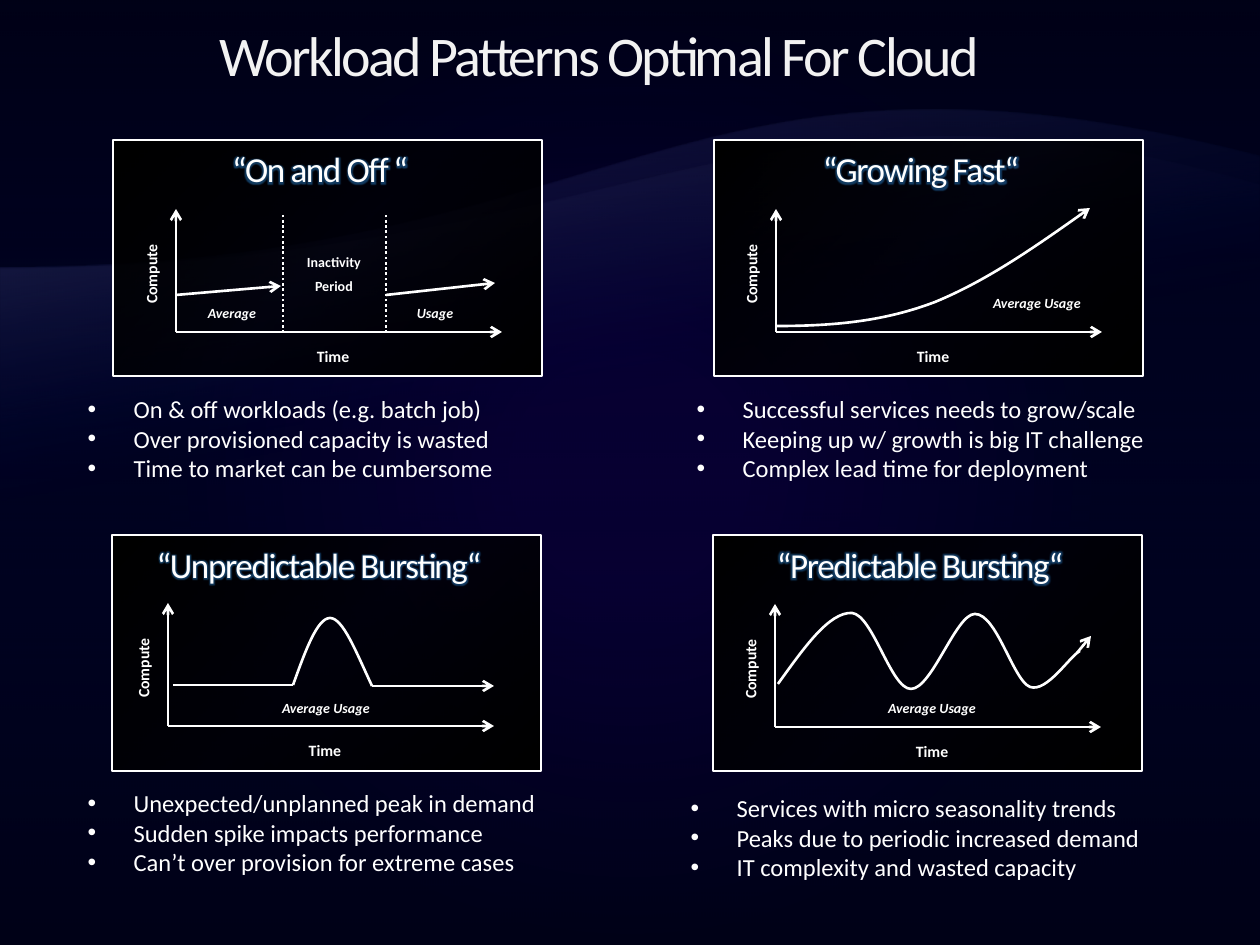
from lxml import etree
from pptx import Presentation
from pptx.dml.color import RGBColor
from pptx.enum.dml import MSO_LINE
from pptx.enum.shapes import MSO_CONNECTOR, MSO_SHAPE
from pptx.enum.text import MSO_ANCHOR, MSO_AUTO_SIZE, PP_ALIGN
from pptx.oxml.ns import qn
from pptx.util import Emu, Pt

RECTANGLE = MSO_SHAPE.RECTANGLE
STRAIGHT = MSO_CONNECTOR.STRAIGHT
DOTTED = MSO_LINE.ROUND_DOT
CENTER, LEFT = PP_ALIGN.CENTER, PP_ALIGN.LEFT
MIDDLE, TOP = MSO_ANCHOR.MIDDLE, MSO_ANCHOR.TOP
NO_AUTOFIT = MSO_AUTO_SIZE.NONE
COMPARISON_LAYOUT = 4
PX_PER_INCH = 126
WIDTH, HEIGHT = 1260, 945
PANEL_WIDTH, PANEL_HEIGHT = 429, 236
LIST_INDENT = 46
WHITE = "FFFFFF"

PANELS = [
    {"corner": (113, 140), "origin": (176, 332), "list_at": (75, 388), "heading": "“On and Off “",
     "points": ["On & off workloads (e.g. batch job)", "Over provisioned capacity is wasted",
                "Time to market can be cumbersome"]},
    {"corner": (112, 535), "origin": (168, 726), "list_at": (75, 782), "heading": "“Unpredictable Bursting“",
     "points": ["Unexpected/unplanned peak in demand", "Sudden spike impacts performance",
                "Can’t over provision for extreme cases"]},
    {"corner": (714, 140), "origin": (776, 332), "list_at": (684, 388), "heading": "“Growing Fast“",
     "points": ["Successful services needs to grow/scale", "Keeping up w/ growth is big IT challenge",
                "Complex lead time for deployment"]},
    {"corner": (713, 535), "origin": (775, 727), "list_at": (678, 787), "heading": "“Predictable Bursting“",
     "points": ["Services with micro seasonality trends", "Peaks due to periodic increased demand",
                "IT complexity and wasted capacity"]},
]
USAGE_LINES = [
    ((176, 295), (281, 286), True), ((386, 295), (495, 283), True),
    ((173, 685), (293, 685), False), ((372, 686), (494, 686), True),
    ((1077, 653), (1091, 636), True),
]
USAGE_CURVES = [
    ((293, 685), [(305, 652, 317, 618, 330, 618), (343, 618, 356, 652, 372, 686)], False),
    ((776, 326), [(836, 326, 885, 321, 935, 302), (986, 281, 1038, 245, 1090, 208)], True),
    ((778, 684), [(804, 648, 829, 612, 852, 613), (873, 615, 891, 689, 911, 689),
                  (932, 689, 956, 614, 975, 614), (997, 614, 1013, 680, 1030, 687),
                  (1047, 693, 1070, 656, 1080, 651)], False),
]
USAGE_LABELS = [("Average", 232, 313), ("Usage", 435, 313), ("Average Usage", 326, 708),
                ("Average Usage", 1037, 303), ("Average Usage", 932, 708)]
WAVES = [
    ((630, 268, 673, 6, 1260, 157), 924, [(0, "797FFF", 55), (35, "000D9E", 0)]),
    ((630, 268, 753, 39, 1260, 185), 803, [(0, "A3A7FF", 30), (35, "000D9E", 0)]),
]


def px(length):
    """Turn a length in px into EMU."""
    return Emu(round(length * 914400 / PX_PER_INCH))


def color(value):
    """Turn a hex string into a colour."""
    return RGBColor.from_string(value)


def apply(target, values):
    """Set each named attribute of the target."""
    for name, value in values.items():
        setattr(target, name, value)


def place(shape, left, top, width, height):
    """Move and size a shape."""
    apply(shape, {"left": px(left), "top": px(top), "width": px(width), "height": px(height)})


def gradient(fill, element, stops, angle=None):
    """Give a fill a gradient, circular when it has no angle, and return it."""
    fill.solid()
    solid = element.find(".//" + qn("a:solidFill"))
    grad = etree.Element(qn("a:gradFill"), rotWithShape="1")
    stop_list = etree.SubElement(grad, qn("a:gsLst"))
    for position, value, opacity in stops:
        stop = etree.SubElement(stop_list, qn("a:gs"), pos=str(position * 1000))
        tone = etree.SubElement(stop, qn("a:srgbClr"), val=value)
        etree.SubElement(tone, qn("a:alpha"), val=str(opacity * 1000))
    if angle is None:
        circle = etree.SubElement(grad, qn("a:path"), path="circle")
        etree.SubElement(circle, qn("a:fillToRect"), l="50000", t="50000", r="50000", b="50000")
    else:
        etree.SubElement(grad, qn("a:lin"), ang=str(angle * 60000), scaled="0")
    solid.getparent().replace(solid, grad)
    return grad


def stroke(line, width=1.5, arrow=False):
    """Draw a line in white, with an open arrowhead if asked."""
    line.fill.solid()
    line.fill.fore_color.rgb = color(WHITE)
    line.width = Pt(width)
    if arrow:
        etree.SubElement(line._get_or_add_ln(), qn("a:tailEnd"), type="arrow")


def add_line(page, start, end, arrow=False, dash=None):
    """Add a straight white line."""
    line = page.shapes.add_connector(STRAIGHT, *map(px, start + end))
    if dash:
        line.line.dash_style = dash
    stroke(line.line, arrow=arrow)
    etree.SubElement(line.element.spPr, qn("a:effectLst"))


def add_curve(page, start, segments, corners=()):
    """Add a freeform of cubic curves, closed through any straight corners."""
    ends = [segment[4:] for segment in segments] + list(corners)
    builder = page.shapes.build_freeform(*map(px, start))
    builder.add_line_segments([tuple(map(px, end)) for end in ends], close=bool(corners))
    shape = builder.convert_to_shape()
    shape.shadow.inherit = False
    straights = list(shape.element.iter(qn("a:lnTo")))
    for straight, segment in zip(straights, segments):
        cubic = etree.Element(qn("a:cubicBezTo"))
        for x, y in zip(segment[::2], segment[1::2]):
            etree.SubElement(cubic, qn("a:pt"), x=str(px(x) - shape.left), y=str(px(y) - shape.top))
        straight.getparent().replace(straight, cubic)
    return shape


def add_gradient_box(page, at, stops, angle):
    """Add a rectangle with a gradient and no line."""
    box = page.shapes.add_shape(RECTANGLE, *map(px, at))
    box.shadow.inherit = False
    gradient(box.fill, box.element, stops, angle)
    box.line.fill.background()
    return box


def write(frame, lines, size, tone=WHITE, bold=False, italic=False, spacing=0,
          align=CENTER, anchor=MIDDLE, margins=(0, 0), gap=0):
    """Write paragraphs into a text frame and return their runs."""
    side, edge = map(px, margins)
    apply(frame, {"word_wrap": True, "auto_size": NO_AUTOFIT, "vertical_anchor": anchor,
                  "margin_left": side, "margin_right": side, "margin_top": edge, "margin_bottom": edge})
    spans = []
    for index, line in enumerate(lines):
        para = frame.paragraphs[0] if index == 0 else frame.add_paragraph()
        apply(para, {"alignment": align, "space_before": Pt(gap if index else 0)})
        span = para.add_run()
        span.text = line
        apply(span.font, {"name": "Calibri", "size": Pt(size), "bold": bold, "italic": italic})
        span.font.color.rgb = color(tone)
        if spacing:
            span.font._element.set("spc", str(round(spacing * 100)))
        spans.append(span)
    return spans


def add_label(page, lines, x, y, width, height, rotation=0, **style):
    """Add a text box centred on a point and return its runs."""
    box = page.shapes.add_textbox(px(x - width / 2), px(y - height / 2), px(width), px(height))
    box.rotation = rotation
    return write(box.text_frame, lines, **style)


def add_heading(page, text, x, y):
    """Add a panel heading with a gradient and a blue glow."""
    span, = add_label(page, [text], x, y, 393, 50, size=20, spacing=-0.8)
    grad = gradient(span.font.fill, span.font._element, [(52, WHITE, 100), (83, "2E95EA", 100)], 90)
    effects = etree.Element(qn("a:effectLst"))
    glow = etree.SubElement(effects, qn("a:glow"), rad="63500")
    tone = etree.SubElement(glow, qn("a:srgbClr"), val="2E95EA")
    etree.SubElement(tone, qn("a:alpha"), val="40000")
    grad.addnext(effects)


def add_panel(page, corner, origin, heading):
    """Add a panel with its heading, axes and axis labels."""
    left, top = corner
    x, y = origin
    stops = [(0, "000000", 100), (50, "000000", 70), (100, "000000", 100)]
    panel = add_gradient_box(page, (left, top, PANEL_WIDTH, PANEL_HEIGHT), stops, 45)
    stroke(panel.line, 1.25)
    add_line(page, origin, (x, y - 123), True)
    add_line(page, origin, (x + 326, y), True)
    add_label(page, ["Compute"], x - 25, y - 58, 96, 26, 270, size=9, bold=True)
    add_label(page, ["Time"], x + 157, y + 24, 90, 26, size=9, bold=True)
    add_heading(page, heading, left + 207, top + 29)


def fill_list(shape, at, points):
    """Move a body placeholder and fill it with bullets."""
    place(shape, *at, 525, 102)
    write(shape.text_frame, points, 14, align=LEFT, anchor=TOP, margins=(12.6, 6.3))
    for para in shape.text_frame.paragraphs:
        props = para._p.get_or_add_pPr()
        props.set("marL", str(px(LIST_INDENT)))
        props.set("indent", str(-px(LIST_INDENT)))
        etree.SubElement(props, qn("a:buFont"), typeface="Arial")
        etree.SubElement(props, qn("a:buChar"), char="•")


def add_backdrop(page):
    """Paint the background, its waves and the dark top and bottom."""
    gradient(page.background.fill, page.element, [(13, "110074", 100), (61, "00064B", 100)])
    for segment, bottom, stops in WAVES:
        wave = add_curve(page, (0, 268), [segment], [(WIDTH, bottom), (0, bottom)])
        gradient(wave.fill, wave.element, stops, 80)
        wave.line.fill.background()
    for top, opacities in ((-2, (70, 0)), (10, (0, 70))):
        stops = [(position, "000000", opacity) for position, opacity in zip((0, 100), opacities)]
        add_gradient_box(page, (0, top, WIDTH, 935), stops, 90)


def main():
    """Build the slide and save it."""
    deck = Presentation()
    deck.slide_width, deck.slide_height = px(WIDTH), px(HEIGHT)
    page = deck.slides.add_slide(deck.slide_layouts[COMPARISON_LAYOUT])
    title, *bodies = page.placeholders
    add_backdrop(page)
    place(title, 14, 24, 1170, 60)
    write(title.text_frame, ["Workload Patterns Optimal For Cloud"], 32, "F2F2F2", spacing=-1.5)
    page.shapes._spTree.append(title.element)
    for panel, body in zip(PANELS, bodies):
        add_panel(page, panel["corner"], panel["origin"], panel["heading"])
        fill_list(body, panel["list_at"], panel["points"])
        page.shapes._spTree.append(body.element)
    for x in (283, 386):
        add_line(page, (x, 333), (x, 215), dash=DOTTED)
    for start, end, arrow in USAGE_LINES:
        add_line(page, start, end, arrow)
    for start, segments, arrow in USAGE_CURVES:
        curve = add_curve(page, start, segments)
        curve.fill.background()
        stroke(curve.line, arrow=arrow)
    for text, x, y in USAGE_LABELS:
        add_label(page, [text], x, y, 118, 20, size=8, bold=True, italic=True)
    add_label(page, ["Inactivity", "Period"], 334, 274, 116, 60, size=8, bold=True, gap=4.5)
    deck.save("out.pptx")


if __name__ == "__main__":
    main()
